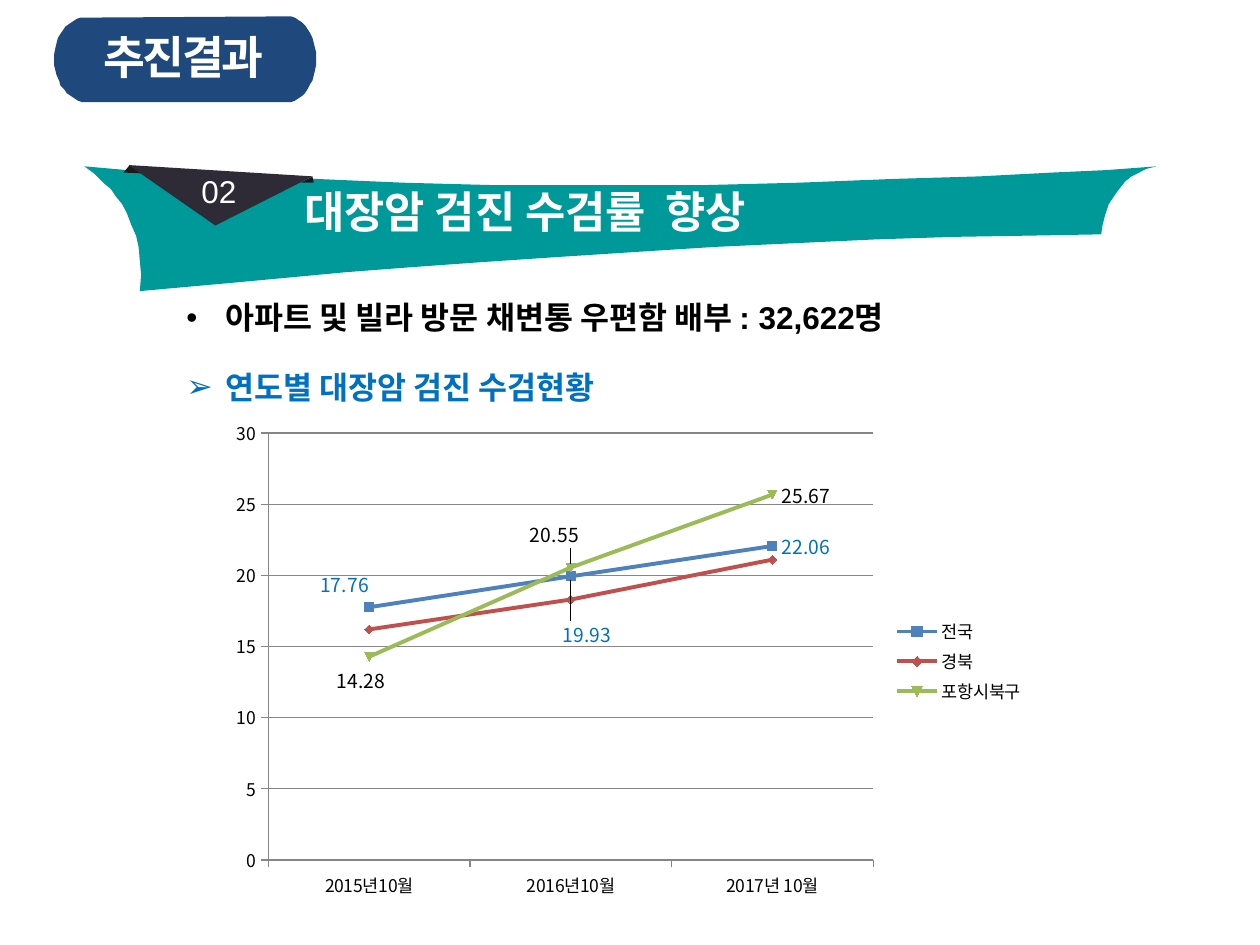
from lxml.etree import SubElement
from pptx import Presentation
from pptx.chart.data import CategoryChartData
from pptx.dml.color import RGBColor
from pptx.enum.chart import XL_CHART_TYPE, XL_LABEL_POSITION, XL_LEGEND_POSITION, XL_TICK_MARK
from pptx.enum.text import MSO_ANCHOR, PP_ALIGN
from pptx.oxml import parse_xml
from pptx.oxml.ns import nsdecls, qn
from pptx.util import Cm, Pt

WHITE = RGBColor(0xFF, 0xFF, 0xFF)
BLACK = RGBColor(0, 0, 0)
TEAL = RGBColor(0x00, 0x99, 0x99)
NAVY = RGBColor(0x1F, 0x49, 0x7D)
DARK = RGBColor(0x2E, 0x2B, 0x36)
FOLD = RGBColor(0x1A, 0x1A, 0x1A)
SKY = RGBColor(0x00, 0x70, 0xC0)
GRAY = RGBColor(0x86, 0x86, 0x86)
BLUE = RGBColor(0x4F, 0x81, 0xBD)
RED = RGBColor(0xC0, 0x50, 0x4D)
GREEN = RGBColor(0x9B, 0xBB, 0x59)

ABOVE, BELOW, RIGHT = XL_LABEL_POSITION.ABOVE, XL_LABEL_POSITION.BELOW, XL_LABEL_POSITION.RIGHT
LATIN, HANGUL = "Arial", "Noto Sans CJK KR"
UNIT = Cm(2.54) / 100  # outline points are in hundredths of an inch

RIGHT_EDGE = [(918, 132), (910, 134), (904, 137), (898, 140), (893, 144), (886, 153), (880, 162),
              (877, 171), (875, 179), (874, 186)]
LOWER_EDGE = [(817, 187), (757, 188), (695, 190), (631, 193), (567, 196), (504, 200), (442, 204),
              (383, 208), (327, 212), (275, 216), (189, 224), (111, 231)]
LEFT_EDGE = [(112, 218), (111, 207), (110, 196), (108, 187), (104, 178), (101, 170), (97, 162),
             (92, 156), (88, 150), (83, 146), (75, 138), (67, 132)]
UPPER_EDGE = [(101, 135), (139, 137), (190, 140), (251, 142), (320, 145), (395, 147), (475, 147),
              (555, 147), (634, 145), (709, 142), (777, 140), (834, 137), (878, 135)]


def curve(a, b, c, d, steps=12):
    """Points on a cubic curve from a to d, with a left out."""
    for i in range(1, steps + 1):
        t = i / steps
        parts = ((1 - t) ** 3, 3 * t * (1 - t) ** 2, 3 * t * t * (1 - t), t ** 3)
        yield tuple(sum(w * p[k] for w, p in zip(parts, (a, b, c, d))) for k in (0, 1))


def layout(**spots):
    """Manual chart layout, in fractions of the chart."""
    node = parse_xml(f'<c:layout {nsdecls("c")}><c:manualLayout/></c:layout>')
    if "w" in spots:
        SubElement(node[0], qn("c:layoutTarget")).set("val", "inner")
        for key in ("xMode", "yMode"):
            SubElement(node[0], qn(f"c:{key}")).set("val", "edge")
    for key, value in spots.items():
        SubElement(node[0], qn(f"c:{key}")).set("val", str(value))
    return node


class Deck:
    def __init__(self):
        self.file = Presentation()
        self.file.slide_width, self.file.slide_height = Cm(25.4), Cm(19.05)
        self.slide = self.file.slides.add_slide(self.file.slide_layouts[6])

    def shape(self, points, color):
        pen = self.slide.shapes.build_freeform(*points[0], scale=UNIT)
        pen.add_line_segments(points[1:], close=True)
        form = pen.convert_to_shape()
        form.shadow.inherit = False
        form.fill.solid()
        form.fill.fore_color.rgb = color
        form.line.fill.background()
        return form

    def text(self, words, box, size, color=WHITE, bold=True, face=LATIN,
             align=PP_ALIGN.LEFT, bullet=None, anchor=MSO_ANCHOR.TOP, track=None):
        frame = self.slide.shapes.add_textbox(*map(Cm, box)).text_frame
        frame.word_wrap = True
        frame.vertical_anchor = anchor
        frame.text = words
        para = frame.paragraphs[0]
        para.alignment = align
        if bullet:
            props = para._p.get_or_add_pPr()
            props.set("marL", str(Cm(0.79)))
            props.set("indent", str(-Cm(0.79)))
            SubElement(props, qn("a:buFont")).set("typeface", LATIN)
            SubElement(props, qn("a:buChar")).set("char", bullet)
        run = para.runs[0]
        font = run.font
        font.size, font.bold, font.name = Pt(size), bold, face
        font.color.rgb = color
        props = run._r.get_or_add_rPr()
        SubElement(props, qn("a:ea")).set("typeface", HANGUL)
        if track:
            props.set("spc", str(track))

    def axis(self, axis):
        axis.major_tick_mark = XL_TICK_MARK.OUTSIDE
        axis.minor_tick_mark = XL_TICK_MARK.NONE
        axis.format.line.color.rgb = GRAY

    def label(self, series, index, place, dx, dy, color):
        label = series.points[index].data_label
        label.font.size = Pt(11)
        label.font.color.rgb = color
        label.position = place
        if dx or dy:
            spot = series._element.xpath(f'.//c:dLbl/c:idx[@val="{index}"]')[0]
            spot.addnext(layout(x=dx, y=dy))

    def chart(self, names, rows, box):
        """Line chart; each row is name, values, color, label color, labels."""
        data = CategoryChartData()
        data.categories = names
        for name, values, *_ in rows:
            data.add_series(name, values)
        chart = self.slide.shapes.add_chart(
            XL_CHART_TYPE.LINE_MARKERS, *map(Cm, box), data).chart
        chart.has_title = False
        chart.font.size, chart.font.name = Pt(10), HANGUL
        chart.font.color.rgb = BLACK
        chart.has_legend = True
        chart.legend.position = XL_LEGEND_POSITION.RIGHT
        chart.legend.include_in_layout = False
        self.axis(chart.category_axis)
        scale = chart.value_axis
        self.axis(scale)
        scale.minimum_scale, scale.maximum_scale, scale.major_unit = 0, 30, 5
        scale.major_gridlines.format.line.color.rgb = GRAY
        plot = chart._chartSpace.xpath(".//c:plotArea")[0]
        for old in plot.findall(qn("c:layout")):
            plot.remove(old)
        plot.insert(0, layout(x=0.06, y=0.04, w=0.74, h=0.86))
        chart.plots[0].vary_by_categories = False
        for series, (_, _, color, tint, labels) in zip(chart.plots[0].series, rows):
            series.smooth = False
            series.format.line.color.rgb = color
            series.format.line.width = Pt(2.25)
            for index, spot in enumerate(labels):
                self.label(series, index, *spot, tint)


def main():
    deck = Deck()
    deck.shape(RIGHT_EDGE + LOWER_EDGE + LEFT_EDGE + UPPER_EDGE, TEAL)
    deck.text("대장암 검진 수검률  향상", (5.89, 3.61, 13.13, 1.32), 25, face=HANGUL)
    flag = [deck.shape(points, color) for points, color in (
        ([(103, 131), (98, 137), (120, 138)], FOLD),
        ([(248, 140), (249, 145), (239, 145)], FOLD),
        ([(102, 131), (248, 140), (171, 179)], DARK))]
    deck.slide.shapes.add_group_shape(flag)
    deck.text("02", (3.63, 3.35, 1.57, 1.02), 18, bold=False, align=PP_ALIGN.CENTER)
    deck.text("연도별 대장암 검진 수검현황", (3.51, 7.29, 10.39, 1.02), 18, SKY, bullet="➢")
    deck.chart(
        ("2015년10월", "2016년10월", "2017년 10월"),
        (("전국", (17.76, 19.93, 22.06), BLUE, SKY,
          ((ABOVE, -0.03, 0), (BELOW, 0.02, 0.07), (RIGHT, 0, 0))),
         ("경북", (16.2, 18.3, 21.1), RED, BLACK, ()),
         ("포항시북구", (14.28, 20.55, 25.67), GREEN, BLACK,
          ((BELOW, -0.01, 0), (ABOVE, -0.02, -0.02), (RIGHT, 0, 0)))),
        (4.42, 8.33, 16.48, 10.01))
    badge = [(67, 14), (228, 13),
             *curve((228, 13), (241, 13), (251, 28), (251, 47)),
             *curve((251, 47), (251, 65), (241, 81), (228, 81)),
             (68, 81),
             *curve((68, 81), (55, 81), (43, 66), (43, 47)),
             *curve((43, 47), (43, 29), (54, 14), (67, 14))]
    deck.shape(badge, NAVY)
    deck.text("추진결과 ", (1.57, 0.46, 4.42, 1.37), 26, align=PP_ALIGN.CENTER,
              anchor=MSO_ANCHOR.MIDDLE, track=-150)
    deck.text("아파트 및 빌라 방문 채변통 우편함 배부 : 32,622명",
              (3.51, 5.89, 16.61, 1.02), 18, BLACK, bullet="•")
    deck.file.save("out.pptx")


if __name__ == "__main__":
    main()
